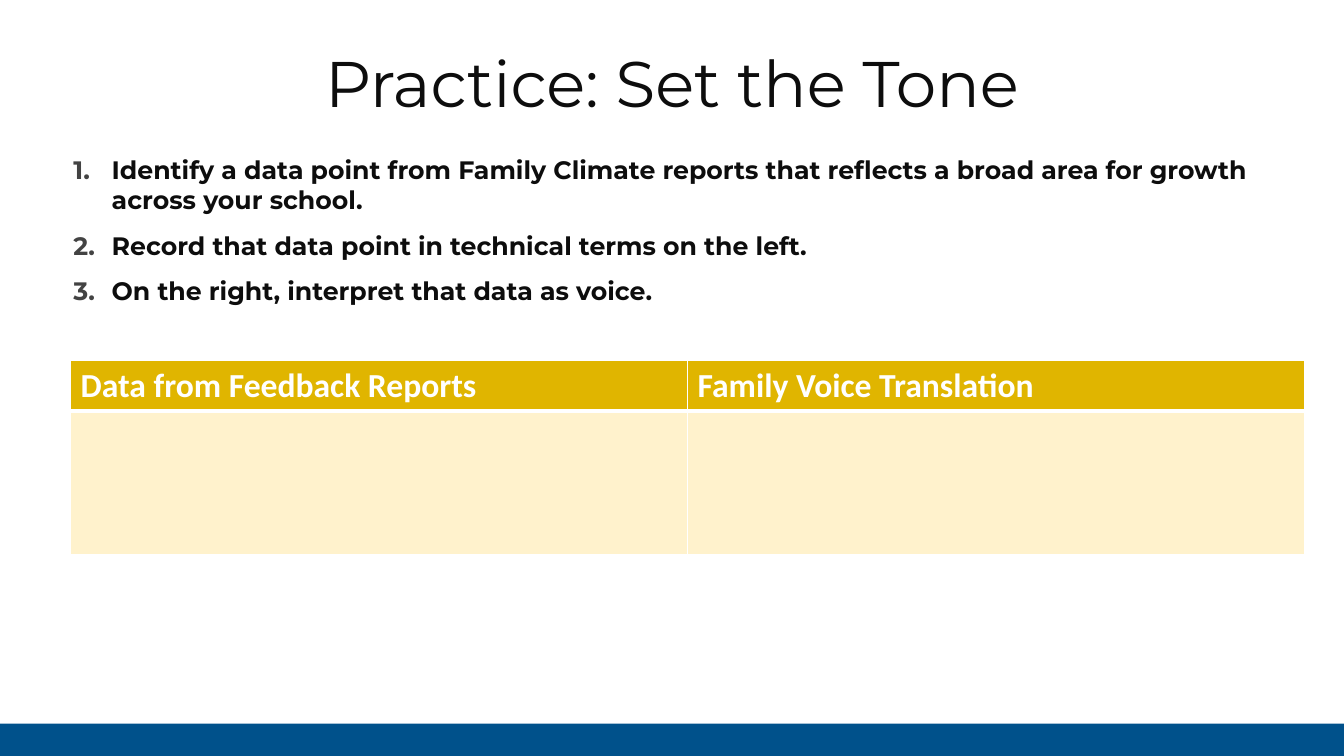
import pptx
import pptx.dml.color
import pptx.enum.shapes
import pptx.enum.text
import pptx.oxml.xmlchemy
import pptx.util
from lxml import etree
from pptx.oxml.ns import qn

Inches = pptx.util.Inches
Pt = pptx.util.Pt

COLORS = {
    "ink": "0D0D0D",
    "number": "434343",
    "white": "FFFFFF",
    "gold": "E0B500",
    "cream": "FFF2CC",
    "blue": "00518B",
}
STEPS = [
    "Identify a data point from Family Climate reports that reflects "
    "a broad area for growth across your school.",
    "Record that data point in technical terms on the left.",
    "On the right, interpret that data as voice.",
]
HEADERS = ["Data from Feedback Reports", "Family Voice Translation"]


def rgb(name):
    return pptx.dml.color.RGBColor.from_string(COLORS[name])


class SlideBuilder:
    """Holds the style and the page being filled."""

    body_font = "Montserrat"
    table_font = "Calibri"

    def __init__(self, page):
        self.page = page

    def add_span(self, para, text, size, font, color, bold=False):
        span = para.add_run()
        span.text = text
        span.font.size = Pt(size)
        span.font.name = font
        span.font.bold = bold
        span.font.color.rgb = rgb(color)

    def add_box(self, left, top, width, height, inset):
        box = self.page.shapes.add_textbox(
            Inches(left), Inches(top), Inches(width), Inches(height))
        frame = box.text_frame
        frame.word_wrap = True
        frame.margin_top = frame.margin_bottom = Inches(inset)
        return frame

    def title(self, text, left, top, width, height):
        para = self.add_box(left, top, width, height, 0.05).paragraphs[0]
        para.alignment = pptx.enum.text.PP_ALIGN.CENTER
        self.add_span(para, text, 46, self.body_font, "ink")

    def numbered_list(self, items, left, top, width, height):
        frame = self.add_box(left, top, width, height, 0.1)
        for index, item in enumerate(items):
            para = frame.add_paragraph() if index else frame.paragraphs[0]
            self.number(para)
            para.space_before = Pt(10 if index else 0)
            para.space_after = Pt(1)
            self.add_span(para, item, 18, self.body_font, "ink", bold=True)

    def number(self, para):
        """Give the paragraph a hanging, coloured automatic number."""
        props = para._p.get_or_add_pPr()
        props.set("marL", str(Inches(0.46)))
        props.set("indent", str(Inches(-0.38)))
        color = etree.SubElement(props, qn("a:buClr"))
        etree.SubElement(color, qn("a:srgbClr"), val=COLORS["number"])
        etree.SubElement(props, qn("a:buFont"), typeface=self.body_font)
        etree.SubElement(props, qn("a:buAutoNum"), type="arabicPeriod")

    def table(self, headers, left, top, column_width, row_heights):
        grid = self.page.shapes.add_table(
            len(row_heights), len(headers), Inches(left), Inches(top),
            Inches(column_width * len(headers)),
            Inches(sum(row_heights))).table
        for column in grid.columns:
            column.width = Inches(column_width)
        for row, height in zip(grid.rows, row_heights):
            row.height = Inches(height)
        for index, header in enumerate(headers):
            head, body = grid.cell(0, index), grid.cell(1, index)
            self.style_cell(head, "gold", bottom=3)
            self.style_cell(body, "cream", top=3)
            self.add_span(head.text_frame.paragraphs[0], header, 24,
                          self.table_font, "white", bold=True)

    def style_cell(self, cell, fill, top=1, bottom=1):
        """Fill the cell and draw white borders of the given point widths."""
        props = cell._tc.get_or_add_tcPr()
        widths = {"lnL": 1, "lnR": 1, "lnT": top, "lnB": bottom}
        for side, width in widths.items():
            line = etree.SubElement(props, qn(f"a:{side}"), w=str(Pt(width)))
            paint = etree.SubElement(line, qn("a:solidFill"))
            etree.SubElement(paint, qn("a:srgbClr"), val=COLORS["white"])
        cell.fill.solid()
        cell.fill.fore_color.rgb = rgb(fill)

    def bar(self, color, left, top, width, height):
        shape = self.page.shapes.add_shape(
            pptx.enum.shapes.MSO_SHAPE.RECTANGLE,
            Inches(left), Inches(top), Inches(width), Inches(height))
        shape.shadow.inherit = False
        shape.fill.solid()
        shape.fill.fore_color.rgb = rgb(color)
        shape.line.fill.background()


def main():
    deck = pptx.Presentation()
    deck.slide_width, deck.slide_height = Inches(13.33), Inches(7.5)
    builder = SlideBuilder(deck.slides.add_slide(deck.slide_layouts[6]))
    builder.title("Practice: Set the Tone", 1.11, 0.38, 11.11, 0.88)
    builder.table(HEADERS, 0.7, 3.58, 6.12, [0.5, 1.42])
    builder.numbered_list(STEPS, 0.55, 1.43, 12.4, 1.87)
    builder.bar("blue", 0, 7.18, 13.33, 0.32)
    deck.save("out.pptx")


if __name__ == "__main__":
    main()
